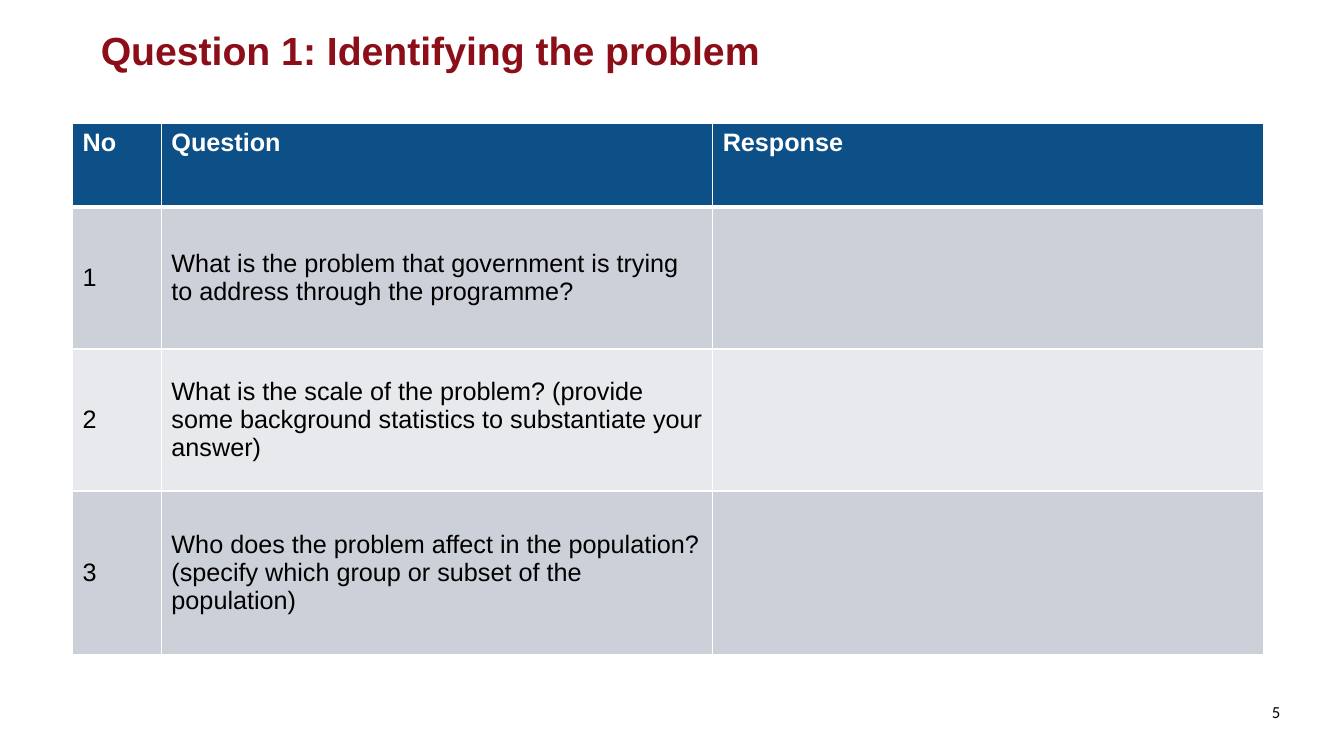
from pptx import Presentation
from pptx.dml.color import RGBColor
from pptx.enum.text import MSO_ANCHOR, MSO_AUTO_SIZE, PP_ALIGN
from pptx.oxml import parse_xml
from pptx.oxml.ns import nsdecls
from pptx.util import Pt

MIDDLE, TOP = MSO_ANCHOR.MIDDLE, MSO_ANCHOR.TOP
LEFT, RIGHT = PP_ALIGN.LEFT, PP_ALIGN.RIGHT
NO_AUTOFIT = MSO_AUTO_SIZE.NONE

COLOURS = {
    "title": "8B0E18",
    "header": "0D5087",
    "odd": "CCD0D9",
    "even": "E7E9ED",
    "white": "FFFFFF",
    "black": "000000",
}
COLUMN_WIDTHS = [63.4, 393.8, 393.8]
ROW_HEIGHTS = [59.8, 101.5, 101.5, 116.6]
HEADINGS = ["No", "Question", "Response"]
QUESTIONS = [
    "What is the problem that government is trying to address through the programme?",
    "What is the scale of the problem? (provide some background statistics to substantiate your answer)",
    "Who does the problem affect in the population? (specify which group or subset of the population)",
]


class SlideBuilder:
    def __init__(self, slide, font="Arial"):
        self.slide = slide
        self.font = font

    def set_text(self, frame, text, size, colour, bold=False, align=LEFT, font=None):
        frame.text = text
        paragraph = frame.paragraphs[0]
        paragraph.alignment = align
        for run in paragraph.runs:
            run.font.name = font or self.font
            run.font.size = Pt(size)
            run.font.bold = bold
            run.font.color.rgb = RGBColor.from_string(COLOURS[colour])

    def title(self, text, left, top, width, height):
        heading = self.slide.shapes.title
        heading.left, heading.top = Pt(left), Pt(top)
        heading.width, heading.height = Pt(width), Pt(height)
        frame = heading.text_frame
        frame.auto_size = NO_AUTOFIT
        frame.vertical_anchor = MIDDLE
        self.set_text(frame, text, 28, "title", bold=True)

    def page_number(self, text, left, top, width, height):
        box = self.slide.shapes.add_textbox(Pt(left), Pt(top), Pt(width), Pt(height))
        box.text_frame.word_wrap = True
        self.set_text(box.text_frame, text, 12, "black", align=RIGHT, font="Calibri")

    def borders(self, cell, above, below):
        properties = cell._tc.get_or_add_tcPr()
        for side, width in (("L", 1), ("R", 1), ("T", above), ("B", below)):
            properties.append(parse_xml(
                f'<a:ln{side} {nsdecls("a")} w="{Pt(width)}"><a:solidFill>'
                f'<a:srgbClr val="{COLOURS["white"]}"/></a:solidFill></a:ln{side}>'
            ))

    def table(self, rows, left, top):
        grid = self.slide.shapes.add_table(
            len(rows), len(COLUMN_WIDTHS), Pt(left), Pt(top),
            Pt(sum(COLUMN_WIDTHS)), Pt(sum(ROW_HEIGHTS)),
        ).table
        grid.horz_banding = False
        for column, width in zip(grid.columns, COLUMN_WIDTHS):
            column.width = Pt(width)
        for number, (row, height, texts) in enumerate(zip(grid.rows, ROW_HEIGHTS, rows)):
            row.height = Pt(height)
            header = number == 0
            fill = "header" if header else "odd" if number % 2 else "even"
            for cell, text in zip(row.cells, texts):
                self.borders(cell, 3 if number == 1 else 1, 3 if header else 1)
                cell.fill.solid()
                cell.fill.fore_color.rgb = RGBColor.from_string(COLOURS[fill])
                cell.vertical_anchor = TOP if header else MIDDLE
                if text:
                    self.set_text(cell.text_frame, text, 18, "white" if header else "black", bold=header)


def main():
    presentation = Presentation()
    presentation.slide_width, presentation.slide_height = Pt(960), Pt(540)
    title_only = presentation.slide_layouts[5]
    builder = SlideBuilder(presentation.slides.add_slide(title_only))
    builder.page_number("5", 866.9, 497.5, 54.7, 28)
    builder.title("Question 1: Identifying the problem", 64.8, 19.4, 828.7, 32.4)
    answers = [[str(number), question, ""] for number, question in enumerate(QUESTIONS, 1)]
    builder.table([HEADINGS] + answers, 51.9, 88)
    presentation.save("out.pptx")


if __name__ == "__main__":
    main()
